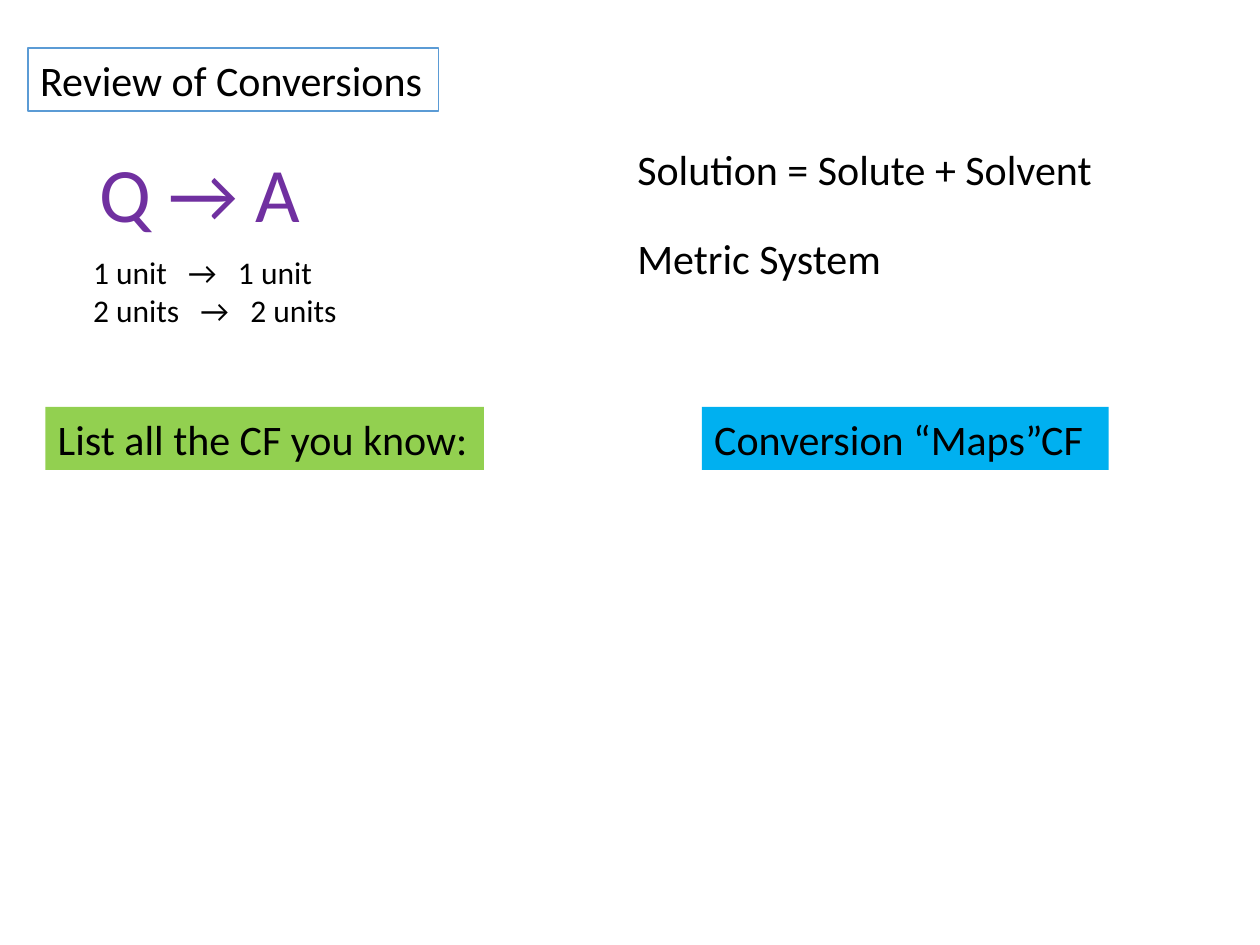
from dataclasses import dataclass
from typing import Optional

import pptx
import pptx.dml.color
import pptx.enum.shapes
import pptx.enum.text
import pptx.util

Inches = pptx.util.Inches


@dataclass(frozen=True)
class Theme:
    font: str = "Calibri"
    black: str = "000000"
    white: str = "FFFFFF"
    purple: str = "7030A0"
    green: str = "92D050"
    cyan: str = "00B0F0"
    border: str = "5B9BD5"
    small: int = 18
    body: int = 24
    large: int = 44


THEME = Theme()


@dataclass(frozen=True)
class Label:
    lines: tuple[str, ...]
    left: float
    top: float
    width: float
    height: float = 0.5
    size: int = THEME.body
    color: str = THEME.black
    fill: Optional[str] = None
    line: Optional[str] = None


# Positions shared by several labels
RIGHT_COLUMN = 4.96
BANNER_TOP = 3.23

LABELS = (
    # Title
    Label(("Review of Conversions",), 0.22, 0.38, 3.26,
          fill=THEME.white, line=THEME.border),
    # Question to answer
    Label(("Q → A",), 0.69, 1.11, 1.81, 0.84, size=THEME.large, color=THEME.purple),
    Label(("1 unit   →   1 unit", "2 units   →   2 units"), 0.64, 1.96, 2.16, 0.71,
          size=THEME.small),
    # Topics on the right
    Label(("Solution = Solute + Solvent",), RIGHT_COLUMN, 1.09, 3.84),
    Label(("Metric System",), RIGHT_COLUMN, 1.8, 2.15),
    # Section banners
    Label(("List all the CF you know:",), 0.36, BANNER_TOP, 3.48, fill=THEME.green),
    Label(("Conversion “Maps”CF",), 5.57, BANNER_TOP, 3.23, fill=THEME.cyan),
)


def rgb(color: str) -> pptx.dml.color.RGBColor:
    return pptx.dml.color.RGBColor.from_string(color)


def write_text(shape, lines: tuple[str, ...], *, size: int, color: str) -> None:
    """Write one left-aligned paragraph for each line."""
    frame = shape.text_frame
    frame.word_wrap = True
    frame.vertical_anchor = pptx.enum.text.MSO_ANCHOR.TOP
    frame.text = "\n".join(lines)
    for paragraph in frame.paragraphs:
        paragraph.alignment = pptx.enum.text.PP_ALIGN.LEFT
        font = paragraph.runs[0].font
        font.name = THEME.font
        font.size = pptx.util.Pt(size)
        font.color.rgb = rgb(color)


def draw_label(slide, label: Label) -> None:
    """Draw a filled rectangle, or a plain text box if there is no fill."""
    bounds = [Inches(value) for value in
              (label.left, label.top, label.width, label.height)]
    if label.fill:
        shape = slide.shapes.add_shape(
            pptx.enum.shapes.MSO_SHAPE.RECTANGLE, *bounds)
        shape.shadow.inherit = False
        shape.fill.solid()
        shape.fill.fore_color.rgb = rgb(label.fill)
        if label.line:
            shape.line.color.rgb = rgb(label.line)
            shape.line.width = pptx.util.Pt(1)
        else:
            shape.line.fill.background()
    else:
        shape = slide.shapes.add_textbox(*bounds)
    write_text(shape, label.lines, size=label.size, color=label.color)


def main() -> None:
    presentation = pptx.Presentation()
    presentation.slide_width = Inches(10)
    presentation.slide_height = Inches(7.5)
    slide = presentation.slides.add_slide(presentation.slide_layouts[6])
    for label in LABELS:
        draw_label(slide, label)
    presentation.save("out.pptx")


if __name__ == "__main__":
    main()
